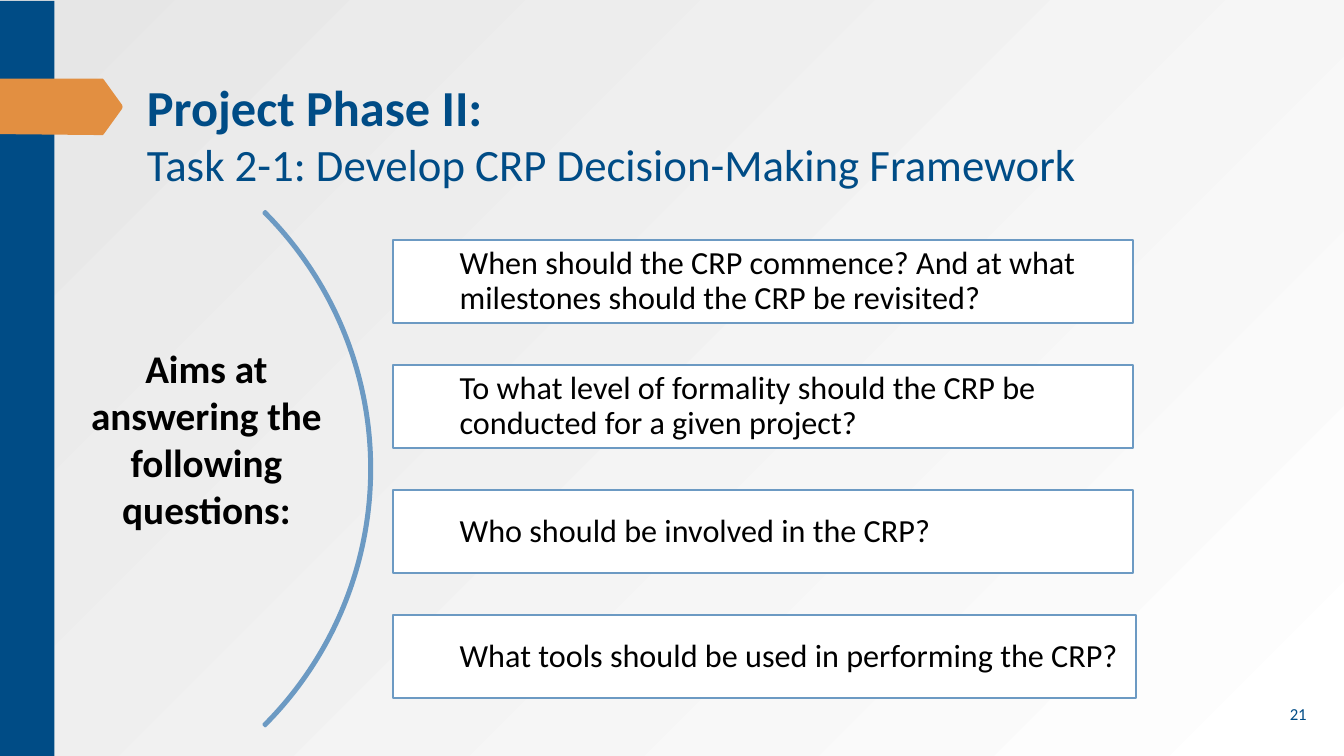
"""Build the slide on the questions behind the CRP decision-making framework."""
from lxml import etree
from pptx import Presentation
from pptx.dml.color import RGBColor
from pptx.enum.shapes import MSO_SHAPE
from pptx.enum.text import MSO_ANCHOR, PP_ALIGN
from pptx.util import Pt

TITLE = [("Project Phase II:", 36, True),
         ("Task 2-1: Develop CRP Decision-Making Framework", 32, False)]
AIM = "Aims at answering the following questions:"
QUESTIONS = [
    ("When should the CRP commence? And at what milestones should the CRP be revisited?", 528.7),
    ("To what level of formality should the CRP be conducted for a given project?", 528.7),
    ("Who should be involved in the CRP?", 528.7),
    ("What tools should be used in performing the CRP?", 530.6),
]
PAGE_NUMBER = "21"

COLOURS = {"navy": "004C86", "orange": "E28F41", "blue": "6C9AC3",
           "white": "FFFFFF", "grey": "E6E6E6", "black": "000000"}
FONT = "Calibri"
SLIDE_WIDTH, SLIDE_HEIGHT = 960, 540
SIDEBAR = (0, 0.7, 38.9, 539.3)
TAG_POINTS = [(0, 56.2), (73.4, 56.2), (74.2, 56.9), (87.2, 74.9), (87.6, 76.3),
              (87.2, 77.8), (74.2, 95.8), (73.4, 96.5), (0, 95.8)]
ARC = (-254.2, 74.9, 519.8, 519.8)
ARC_ADJUSTMENTS = (189, 27, 0.003)
AIM_BOX = (54, 213.1, 218.9, 200.9)
TITLE_BOX = (97.9, 51.1, 808.6, 90)
NUMBER_BOX = (907.2, 495.4, 40.3, 28.8)
QUESTION_LEFT, QUESTION_TOP, QUESTION_HEIGHT, QUESTION_PITCH = 280.8, 171.4, 59.5, 89.3
QUESTION_FRAME = {"margin_left": Pt(47.5), "margin_right": Pt(4.3),
                  "margin_top": Pt(4.3), "margin_bottom": Pt(4.3)}
DRAWING = "{http://schemas.openxmlformats.org/drawingml/2006/main}"

RECTANGLE, BLOCK_ARC, DELAY = MSO_SHAPE.RECTANGLE, MSO_SHAPE.BLOCK_ARC, MSO_SHAPE.FLOWCHART_DELAY
TOP, MIDDLE = MSO_ANCHOR.TOP, MSO_ANCHOR.MIDDLE
LEFT, CENTER = PP_ALIGN.LEFT, PP_ALIGN.CENTER


def colour(name):
    return RGBColor.from_string(COLOURS[name])


def set_attributes(target, values):
    for name, value in values.items():
        setattr(target, name, value)


def paint(shape, fill=None, line=None, weight=1):
    shape.shadow.inherit = False
    if fill:
        shape.fill.solid()
        shape.fill.fore_color.rgb = colour(fill)
    else:
        shape.fill.background()
    if line:
        shape.line.color.rgb = colour(line)
        shape.line.width = Pt(weight)
    else:
        shape.line.fill.background()


def add_preset(slide, kind, box, **style):
    shape = slide.shapes.add_shape(kind, *map(Pt, box))
    paint(shape, **style)
    return shape


def write(shape, runs, font_colour, anchor=TOP, align=LEFT, spacing=1.0, **frame_values):
    frame = shape.text_frame
    set_attributes(frame, {"word_wrap": True, "vertical_anchor": anchor, **frame_values})
    paragraph = frame.paragraphs[0]
    set_attributes(paragraph, {"alignment": align, "line_spacing": spacing})
    for index, (text, size, bold) in enumerate(runs):
        if index:
            paragraph.add_line_break()
        run = paragraph.add_run()
        run.text = text
        set_attributes(run.font, {"name": FONT, "size": Pt(size), "bold": bold})
        run.font.color.rgb = colour(font_colour)


def add_background(slide):
    fill = slide.background.fill
    fill.gradient()
    for stop, name in zip(fill.gradient_stops, ("white", "grey")):
        stop.color.rgb = colour(name)
    gradient = next(slide.element.iter(DRAWING + "gradFill"))
    linear = gradient.find(DRAWING + "lin")
    radial = etree.Element(DRAWING + "path", {"path": "circle"})
    etree.SubElement(radial, DRAWING + "fillToRect", {"l": "100000", "t": "100000"})
    gradient.replace(linear, radial)


def add_decoration(slide):
    add_preset(slide, RECTANGLE, SIDEBAR, fill="navy")
    points = [(Pt(x), Pt(y)) for x, y in TAG_POINTS]
    builder = slide.shapes.build_freeform(*points[0])
    builder.add_line_segments(points[1:], close=True)
    paint(builder.convert_to_shape(), fill="orange")
    arc = add_preset(slide, BLOCK_ARC, ARC, line="blue", weight=2)
    for index, value in enumerate(ARC_ADJUSTMENTS):
        arc.adjustments[index] = value


def add_questions(slide):
    for index, (question, width) in enumerate(QUESTIONS):
        top = QUESTION_TOP + index * QUESTION_PITCH
        box = add_preset(slide, RECTANGLE, (QUESTION_LEFT, top, width, QUESTION_HEIGHT),
                         fill="white", line="blue", weight=1.25)
        write(box, [(question, 23, False)], "black", MIDDLE, spacing=0.9, **QUESTION_FRAME)


def main():
    presentation = Presentation()
    set_attributes(presentation, {"slide_width": Pt(SLIDE_WIDTH), "slide_height": Pt(SLIDE_HEIGHT)})
    slide = presentation.slides.add_slide(presentation.slide_layouts[6])
    add_background(slide)
    add_decoration(slide)
    add_questions(slide)
    write(add_preset(slide, DELAY, AIM_BOX), [(AIM, 28, True)], "black", align=CENTER)
    title = slide.shapes.add_textbox(*map(Pt, TITLE_BOX))
    write(title, TITLE, "navy")
    number = slide.shapes.add_textbox(*map(Pt, NUMBER_BOX))
    write(number, [(PAGE_NUMBER, 12, False)], "navy", MIDDLE, CENTER)
    presentation.save("out.pptx")


if __name__ == "__main__":
    main()
